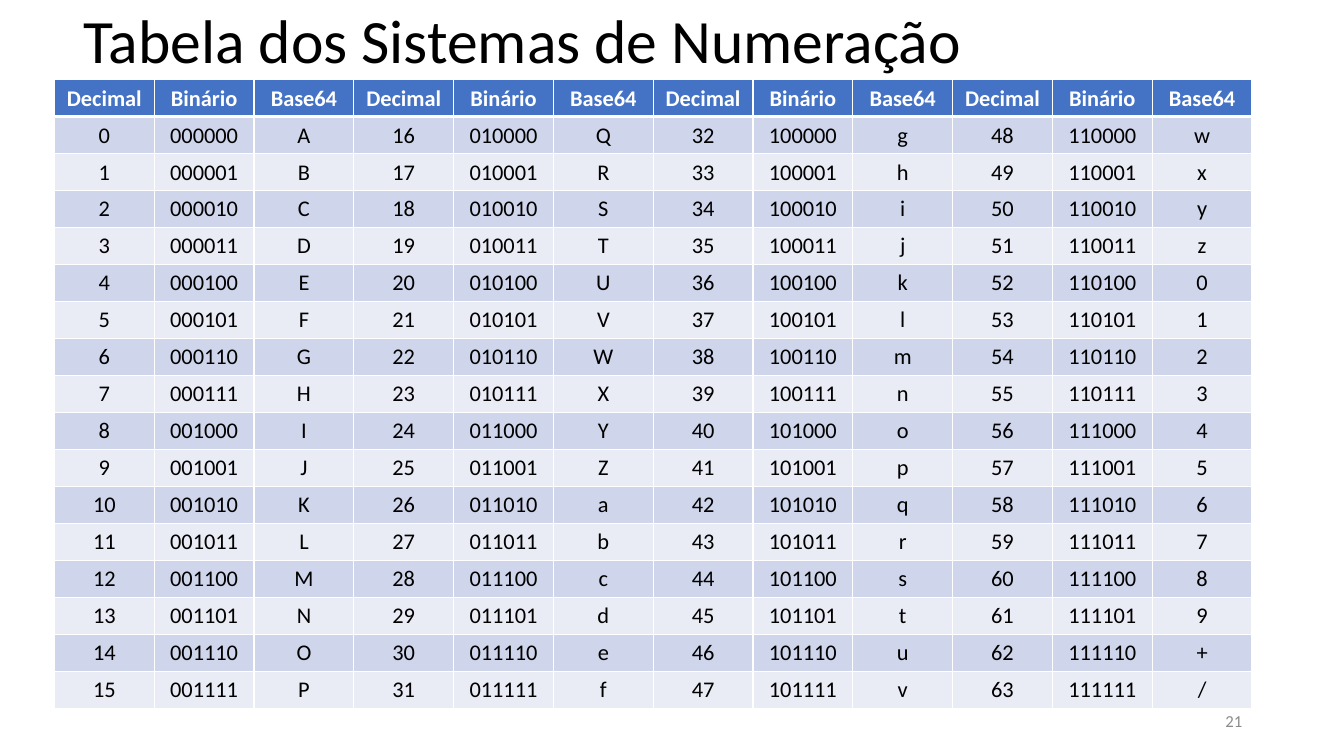
import pptx
import pptx.dml.color
import pptx.enum.text
import pptx.oxml
import pptx.oxml.ns
import pptx.util
from pptx.util import Inches

BLACK = pptx.dml.color.RGBColor(0x00, 0x00, 0x00)
WHITE = pptx.dml.color.RGBColor(0xFF, 0xFF, 0xFF)
GRAY = pptx.dml.color.RGBColor(0x8C, 0x8C, 0x8C)
HEADER_BLUE = pptx.dml.color.RGBColor(0x44, 0x72, 0xC4)
BAND_DARK = pptx.dml.color.RGBColor(0xCF, 0xD5, 0xEA)
BAND_LIGHT = pptx.dml.color.RGBColor(0xE9, 0xEB, 0xF5)

LEFT = pptx.enum.text.PP_ALIGN.LEFT
CENTER = pptx.enum.text.PP_ALIGN.CENTER
RIGHT = pptx.enum.text.PP_ALIGN.RIGHT

HEADINGS = ["Decimal", "Binário", "Base64"]
BASE64_SYMBOLS = "ABCDEFGHIJKLMNOPQRSTUVWXYZabcdefghijklmnopqrstuvwxyz0123456789+/"
GROUPS = 4
GROUP_SIZE = len(BASE64_SYMBOLS) // GROUPS
ROWS = GROUP_SIZE + 1
COLUMNS = GROUPS * len(HEADINGS)
TABLE_HEIGHT = 6.23
COLUMN_WIDTH = 0.99


def write_text(text_frame, text, alignment, size, color, bold=False):
    paragraph = text_frame.paragraphs[0]
    paragraph.alignment = alignment
    run = paragraph.add_run()
    run.text = text
    font_format = {"name": "Calibri", "size": pptx.util.Pt(size), "bold": bold}
    for name, value in font_format.items():
        setattr(run.font, name, value)
    run.font.color.rgb = color
    return paragraph


def add_text(slide, box, text, alignment, size, color):
    shape = slide.shapes.add_textbox(*map(Inches, box))
    frame_format = {
        "word_wrap": True,
        "vertical_anchor": pptx.enum.text.MSO_ANCHOR.MIDDLE,
    }
    for name, value in frame_format.items():
        setattr(shape.text_frame, name, value)
    return write_text(shape.text_frame, text, alignment, size, color)


def add_cell_borders(cell, widths):
    """Draw white borders; widths maps the sides L, R, T, B, in that order, to points."""
    properties = cell._tc.get_or_add_tcPr()
    for side, width in widths.items():
        properties.append(pptx.oxml.parse_xml(
            f'<a:ln{side} {pptx.oxml.ns.nsdecls("a")} w="{pptx.util.Pt(width)}">'
            f'<a:solidFill><a:srgbClr val="{WHITE}"/></a:solidFill></a:ln{side}>'
        ))


def table_rows():
    """Return the heading row and the rows of decimal, binary and Base64 values."""
    rows = [HEADINGS * GROUPS]
    for first in range(GROUP_SIZE):
        row = []
        for number in range(first, len(BASE64_SYMBOLS), GROUP_SIZE):
            row += [str(number), f"{number:06b}", BASE64_SYMBOLS[number]]
        rows.append(row)
    return rows


def add_number_table(slide, left, top):
    table = slide.shapes.add_table(
        ROWS, COLUMNS, Inches(left), Inches(top),
        Inches(COLUMN_WIDTH * COLUMNS), Inches(TABLE_HEIGHT),
    ).table
    for column in table.columns:
        column.width = Inches(COLUMN_WIDTH)
    for row in table.rows:
        row.height = Inches(TABLE_HEIGHT / ROWS)
    for row_index, texts in enumerate(table_rows()):
        is_header = row_index == 0
        band = BAND_DARK if row_index % 2 else BAND_LIGHT
        widths = {
            "L": 1,
            "R": 1,
            "T": 3 if row_index == 1 else 1,
            "B": 3 if is_header else 1,
        }
        for column_index, text in enumerate(texts):
            cell = table.cell(row_index, column_index)
            add_cell_borders(cell, widths)
            cell.fill.solid()
            cell.fill.fore_color.rgb = HEADER_BLUE if is_header else band
            write_text(cell.text_frame, text, CENTER, 16,
                       WHITE if is_header else BLACK, is_header)


def main():
    presentation = pptx.Presentation()
    presentation.slide_width = Inches(13.33)
    presentation.slide_height = Inches(7.5)
    slide = presentation.slides.add_slide(presentation.slide_layouts[6])

    title = add_text(slide, (0.73, 0, 11.5, 0.87),
                     "Tabela dos Sistemas de Numeração", LEFT, 44, BLACK)
    title.line_spacing = 0.9
    add_text(slide, (9.42, 6.95, 3, 0.4), "21", RIGHT, 12, GRAY)
    add_number_table(slide, 0.54, 0.79)

    presentation.save("out.pptx")


if __name__ == "__main__":
    main()
